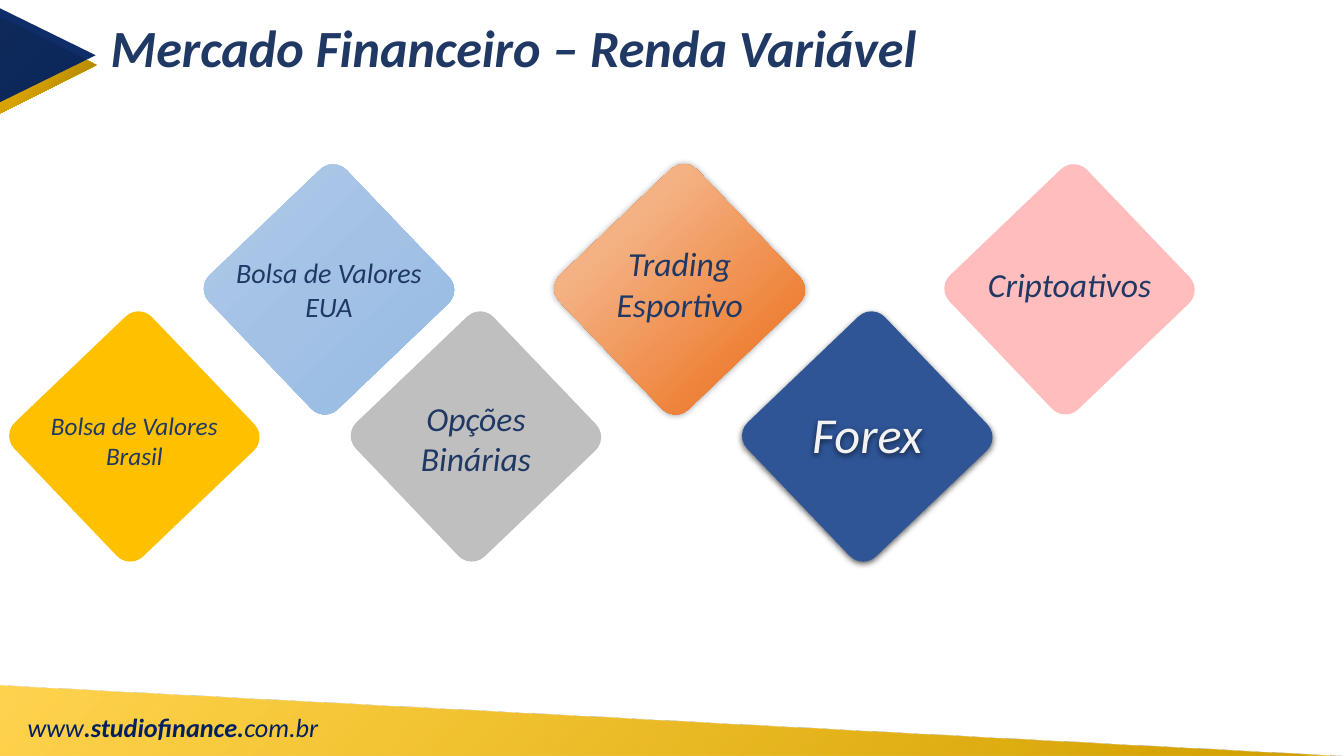
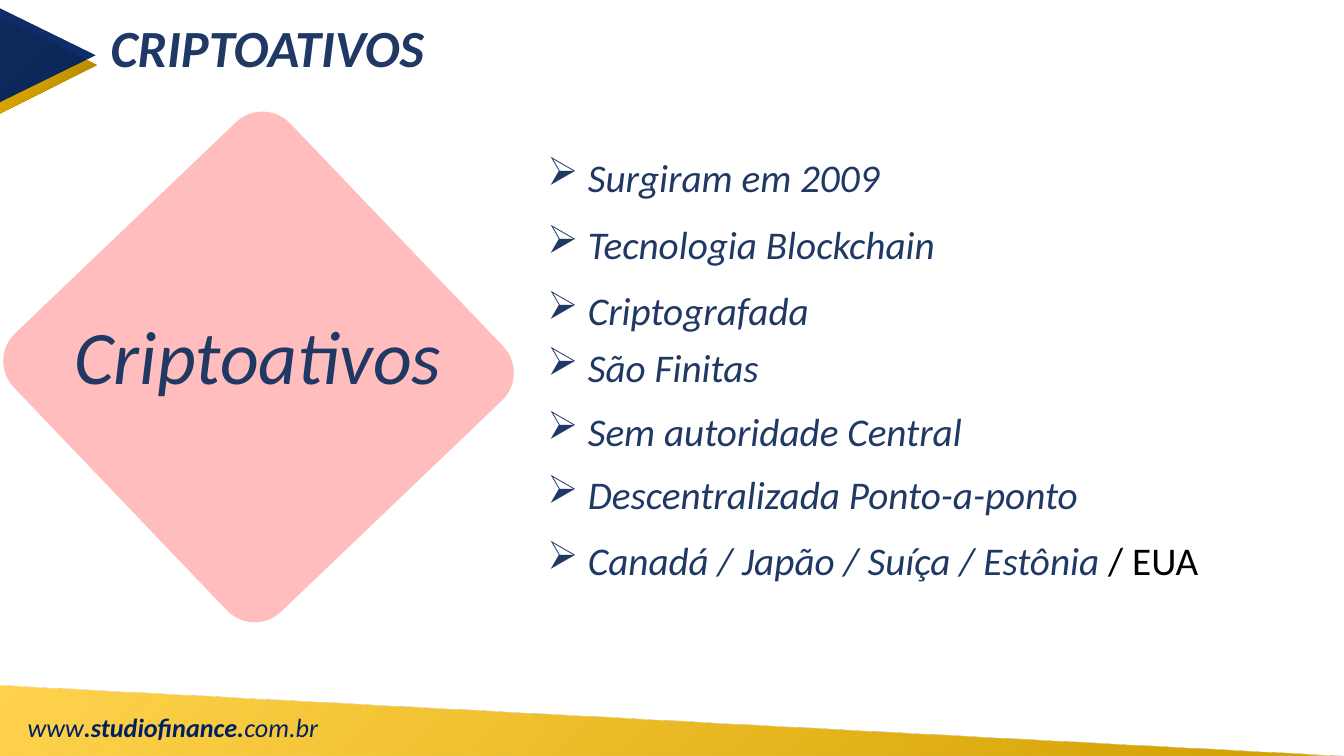
import pptx
import pptx.util
import pptx.dml.color
import pptx.enum.shapes
import pptx.enum.text
import pptx.oxml.ns
import lxml.etree

Pt = pptx.util.Pt
SHAPES = pptx.enum.shapes.MSO_SHAPE
ALIGN = pptx.enum.text.PP_ALIGN
ANCHOR = pptx.enum.text.MSO_ANCHOR
qn = pptx.oxml.ns.qn

FONT = "Calibri"
COLORS = {
    "navy": "002060",
    "title": "203864",
    "amber": "FFC000",
    "gray": "BFBFBF",
    "blue": "2F5597",
    "pink": "FFBDBD",
    "light": "F2F2F2",
    "black": "000000",
}
CORNER = {"path": "circle"}
GRADIENTS = {
    "band": ([(0, "FFD966", 100), (3, "D2A000", 100), (100, "FFC000", 69)], CORNER),
    "gold": ([(0, "977200", 100), (50, "D7A200", 100), (100, "FFC000", 100)], CORNER),
    "sky": ([(0, "B1CBE9", 100), (50, "A3C1E5", 100), (100, "93B9E4", 100)], {"angle": 90}),
    "orange": ([(3, "EC7320", 100), (24, "EE8137", 100), (72, "F4B183", 100)], {"angle": 270}),
}
SOFT_SHADOW = {"opacity": 63, "blur": 4.5, "distance": 1.5, "angle": 90}
GLOW_SHADOW = {"opacity": 40, "blur": 5, "distance": 0, "angle": 0}

UPPER_ROW, LOWER_ROW = 140.4, 245.5
DIAMOND_WIDTH, DIAMOND_HEIGHT = 136, 132.5
DIAMONDS = [
    (28, LOWER_ROW, "amber", "Bolsa de Valores\vBrasil", 18, "title", 3, None),
    (167, UPPER_ROW, "sky", "Bolsa de Valores\vEUA", 20, "title", 0, None),
    (272, LOWER_ROW, "gray", "Opções\vBinárias", 24, "title", 1, None),
    (551.5, LOWER_ROW, "blue", "Forex", 36, "light", -2.5, SOFT_SHADOW),
    (696, UPPER_ROW, "pink", "Criptoativos", 24, "title", -3.5, None),
    (417.5, UPPER_ROW, "orange", "Trading\vEsportivo", 24, "title", -4, GLOW_SHADOW),
]
FACTS = [
    ("Surgiram em 2009", 0),
    ("Tecnologia Blockchain", 14.7),
    ("Criptografada", 13.3),
    ("São Finitas", 6.9),
    ("Sem autoridade Central", 11.9),
    ("Descentralizada Ponto-a-ponto", 11.9),
    ("Canadá / Japão / Suíça / Estônia ", 13.3),
]


def add_node(parent, tag, **attributes):
    node = lxml.etree.SubElement(parent, qn(tag))
    for name, value in attributes.items():
        node.set(name, str(value))
    return node


def add_color(parent, color, opacity):
    node = add_node(parent, "a:srgbClr", val=color)
    if opacity < 100:
        add_node(node, "a:alpha", val=opacity * 1000)


def fill_gradient(shape, stops, angle=0, path=None):
    shape.fill.gradient()
    gradient = shape._element.spPr.find(qn("a:gradFill"))
    for child in list(gradient):
        gradient.remove(child)
    gradient.set("rotWithShape", "1")
    stop_list = add_node(gradient, "a:gsLst")
    for position, color, opacity in stops:
        add_color(add_node(stop_list, "a:gs", pos=position * 1000), color, opacity)
    if path:
        route = add_node(gradient, "a:path", path=path)
        add_node(route, "a:fillToRect", l=100000, t=100000)
    else:
        add_node(gradient, "a:lin", ang=angle * 60000, scaled=0)


def add_shadow(shape, opacity, blur, distance, angle):
    effects = shape._element.spPr.find(qn("a:effectLst"))
    shadow = add_node(effects, "a:outerShdw", blurRad=Pt(blur), dist=Pt(distance),
                      dir=angle * 60000, algn="ctr", rotWithShape=0)
    add_color(shadow, COLORS["black"], opacity)


def add_filled_shape(slide, kind, frame, fill, rotation=0, opacity=100):
    shape = slide.shapes.add_shape(kind, *map(Pt, frame))
    shape.rotation = rotation
    shape.shadow.inherit = False
    shape.line.fill.background()
    if fill in GRADIENTS:
        stops, direction = GRADIENTS[fill]
        fill_gradient(shape, stops, **direction)
    else:
        shape.fill.solid()
        shape.fill.fore_color.rgb = pptx.dml.color.RGBColor.from_string(COLORS[fill])
        if opacity < 100:
            color = shape._element.spPr.find(qn("a:solidFill"))[0]
            add_node(color, "a:alpha", val=opacity * 1000)
    return shape


def format_span(span, size, color, bold=False, italic=True):
    span.font.name = FONT
    span.font.size = Pt(size)
    span.font.bold = bold
    span.font.italic = italic
    span.font.color.rgb = pptx.dml.color.RGBColor.from_string(COLORS[color])


def add_text_box(slide, frame, anchor=ANCHOR.TOP):
    box = slide.shapes.add_textbox(*map(Pt, frame))
    box.shadow.inherit = False
    box.text_frame.word_wrap = True
    box.text_frame.vertical_anchor = anchor
    return box


def add_line_of_text(slide, frame, text, size, color, bold=False, align=ALIGN.LEFT):
    box = add_text_box(slide, frame, ANCHOR.MIDDLE)
    para = box.text_frame.paragraphs[0]
    para.text = text
    para.alignment = align
    for span in para.runs:
        format_span(span, size, color, bold)
    return box


def add_diamond(slide, frame, fill, shadow=None):
    diamond = add_filled_shape(slide, SHAPES.ROUNDED_RECTANGLE, frame, fill, 316.3)
    diamond.adjustments[0] = 0.1
    if shadow:
        add_shadow(diamond, **shadow)


def add_footer(slide):
    add_filled_shape(slide, SHAPES.RIGHT_TRIANGLE, (0, 489.6, 960, 50.4), "band")
    box = add_text_box(slide, (0, 504.7, 247, 30))
    para = box.text_frame.paragraphs[0]
    para.alignment = ALIGN.CENTER
    for text, bold in (("www", False), (".studiofinance.", True), ("com.br", False)):
        span = para.add_run()
        span.text = text
        format_span(span, 18.7, "navy", bold)


def add_page(deck, title):
    slide = deck.slides.add_slide(deck.slide_layouts[6])
    add_footer(slide)
    add_filled_shape(slide, SHAPES.ISOSCELES_TRIANGLE, (0, 12.2, 69, 68.5), "gold", 90)
    add_filled_shape(slide, SHAPES.ISOSCELES_TRIANGLE, (0, 5, 67.7, 69), "navy", 90, 94)
    add_line_of_text(slide, (72, 7.2, 593, 52.6), title, 37.3, "title", bold=True)
    return slide


def add_market_diamonds(slide):
    margin = 7
    for left, top, fill, text, size, color, offset, shadow in DIAMONDS:
        add_diamond(slide, (left, top, DIAMOND_WIDTH, DIAMOND_HEIGHT), fill, shadow)
        frame = (left - margin, top + offset, DIAMOND_WIDTH + 2 * margin, DIAMOND_HEIGHT)
        label = add_line_of_text(slide, frame, text, size, color, align=ALIGN.CENTER)
        if shadow is SOFT_SHADOW:
            add_shadow(label, **shadow)


def add_facts(slide):
    indent = 29
    frame = add_text_box(slide, (383.8, 105.8, 536, 360)).text_frame
    for index, (text, gap) in enumerate(FACTS):
        para = frame.add_paragraph() if index else frame.paragraphs[0]
        properties = para._p.get_or_add_pPr()
        properties.set("marL", str(Pt(indent)))
        properties.set("indent", str(-Pt(indent)))
        add_node(properties, "a:buChar", char="➢")
        para.text = text
        if gap:
            para.space_before = Pt(gap)
        format_span(para.runs[0], 28, "title")
    span = para.add_run()
    span.text = "/ EUA"
    format_span(span, 28, "black", italic=False)


def main():
    deck = pptx.Presentation()
    deck.slide_width, deck.slide_height = Pt(960), Pt(540)

    add_market_diamonds(add_page(deck, "Mercado Financeiro – Renda Variável"))

    crypto = add_page(deck, "CRIPTOATIVOS")
    add_diamond(crypto, (48.2, 124.6, 273, 275), "pink")
    add_line_of_text(crypto, (40.3, 216.7, 288, 72.7), "Criptoativos", 54, "title",
                     align=ALIGN.CENTER)
    add_facts(crypto)

    deck.save("out.pptx")


if __name__ == "__main__":
    main()
